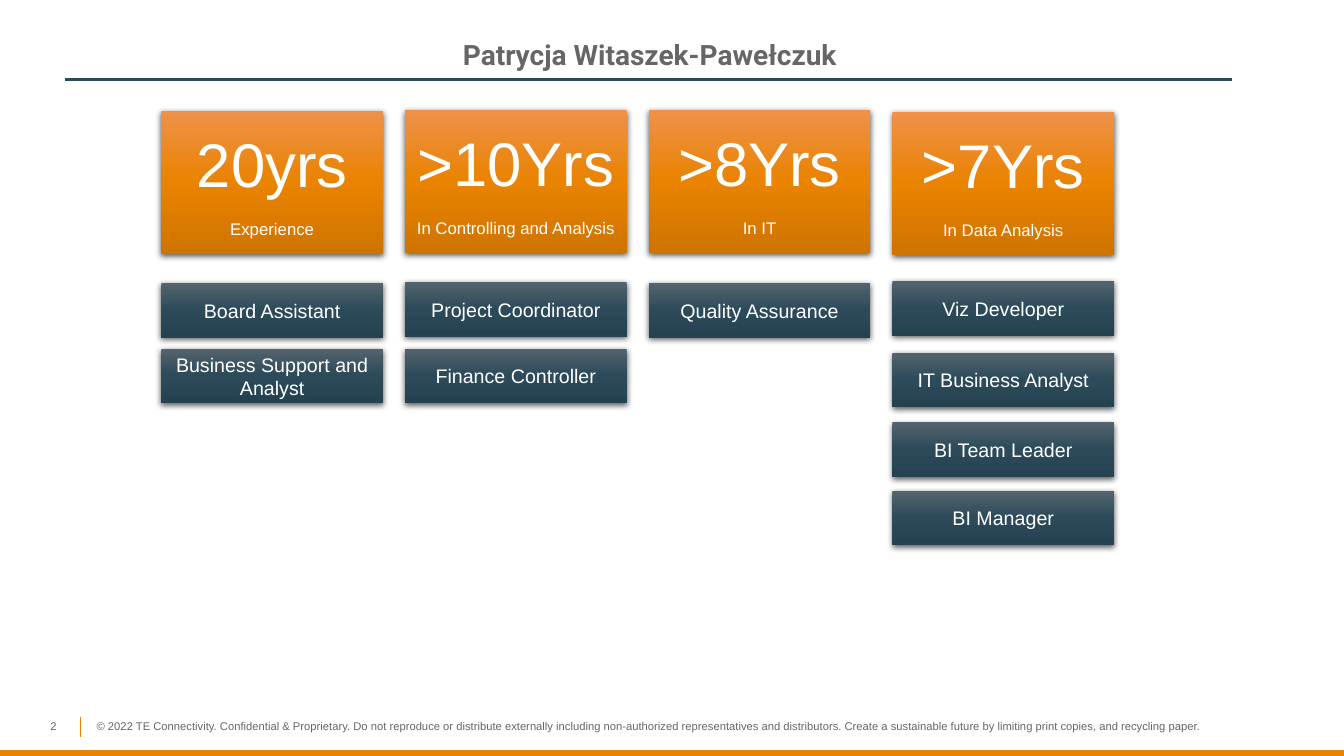
from pptx import Presentation
from pptx import util as u
from pptx.dml.color import RGBColor
from pptx.enum import shapes, text
from pptx.oxml import parse_xml
from pptx.oxml.ns import nsdecls

# Content: years, field, card top, then each role with its top
TITLE = "Patrycja Witaszek-Pawełczuk"
COLUMNS = [
    ("20yrs", "Experience", 1.1,
     [("Board Assistant", 2.81), ("Business Support and Analyst", 3.46)]),
    (">10Yrs", "In Controlling and Analysis", 1.09,
     [("Project Coordinator", 2.8), ("Finance Controller", 3.46)]),
    (">8Yrs", "In IT", 1.09, [("Quality Assurance", 2.81)]),
    (">7Yrs", "In Data Analysis", 1.11,
     [("Viz Developer", 2.79), ("IT Business Analyst", 3.5),
      ("BI Team Leader", 4.19), ("BI Manager", 4.87)]),
]
PAGE_NUMBER = "2"
COPYRIGHT = (
    "© 2022 TE Connectivity. Confidential & Proprietary. Do not reproduce or "
    "distribute externally including non-authorized representatives and "
    "distributors. Create a sustainable future by limiting print copies, and "
    "recycling paper."
)

# Style
ORANGE, NAVY, GREY, WHITE = "E98300", "2E4957", "666666", "FFFFFF"
ORANGE_FADE = ("EF914B", "E98300", "CF7400")
NAVY_FADE = ("54646E", "2C4A59", "254251")
LEFT, PITCH, WIDTH = 1.6, 2.417, 2.2
CARD_HEIGHT, ROLE_HEIGHT = 1.42, 0.54


def color(value):
    return RGBColor.from_string(value)


def write(para, words, size, ink, font="Arial", bold=False):
    span = para.add_run()
    span.text = words
    span.font.name, span.font.size, span.font.bold = font, u.Pt(size), bold
    span.font.color.rgb = color(ink)


def add_line(page, x1, y1, x2, y2, ink, weight):
    line = page.shapes.add_connector(
        shapes.MSO_CONNECTOR.STRAIGHT, *map(u.Inches, (x1, y1, x2, y2)))
    line.line.color.rgb = color(ink)
    line.line.width = u.Pt(weight)
    line._element.spPr.append(parse_xml(f"<a:effectLst {nsdecls('a')}/>"))


def add_tile(page, left, top, height, fade, lines):
    """Shaded box; lines holds (words, size, space before)."""
    box = page.shapes.add_shape(
        shapes.MSO_SHAPE.RECTANGLE, *map(u.Inches, (left, top, WIDTH, height)))
    box.line.fill.background()
    stops = "".join(f'<a:gs pos="{i * 50000}"><a:srgbClr val="{tone}"/></a:gs>'
                    for i, tone in enumerate(fade))
    properties = box._element.spPr
    properties.insert(2, parse_xml(
        f'<a:gradFill {nsdecls("a")} rotWithShape="1"><a:gsLst>{stops}</a:gsLst>'
        '<a:lin ang="5400000" scaled="0"/></a:gradFill>'))
    properties.append(parse_xml(
        f'<a:effectLst {nsdecls("a")}><a:outerShdw blurRad="{u.Pt(4.5)}" '
        f'dist="{u.Pt(1.5)}" dir="5400000" algn="ctr" rotWithShape="0">'
        '<a:srgbClr val="000000"><a:alpha val="63000"/></a:srgbClr>'
        '</a:outerShdw></a:effectLst>'))
    frame = box.text_frame
    frame.word_wrap = True
    frame.vertical_anchor = text.MSO_ANCHOR.MIDDLE
    for i, (words, size, gap) in enumerate(lines):
        para = frame.add_paragraph() if i else frame.paragraphs[0]
        para.alignment = text.PP_ALIGN.CENTER
        if gap:
            para.space_before = u.Pt(gap)
        write(para, words, size, WHITE)


def add_note(page, left, width, height, words, inset):
    box = page.shapes.add_textbox(*map(u.Inches, (left, 7.09, width, height)))
    frame = box.text_frame
    frame.word_wrap = True
    frame.margin_left = frame.margin_right = u.Inches(inset)
    write(frame.paragraphs[0], words, 8, GREY)


def main():
    deck = Presentation()
    deck.slide_width, deck.slide_height = u.Inches(13.33), u.Inches(7.5)
    page = deck.slides.add_slide(deck.slide_layouts[5])

    # Footer
    add_note(page, 0.86, 11.22, 0.21, COPYRIGHT, 0.1)
    add_line(page, 0, 7.47, 13.33, 7.47, ORANGE, 4.5)
    add_line(page, 0.8, 7.11, 0.8, 7.31, ORANGE, 1)
    add_note(page, 0.5, 0.28, 0.41, PAGE_NUMBER, 0)

    # Title and rule
    title = page.shapes.title
    title.left, title.top, title.width, title.height = map(
        u.Inches, (0.67, 0.37, 11.55, 0.67))
    frame = title.text_frame
    frame.margin_left = frame.margin_right = 0
    frame.margin_top = frame.margin_bottom = 0
    frame.vertical_anchor = text.MSO_ANCHOR.TOP
    frame.auto_size = text.MSO_AUTO_SIZE.NONE
    frame.paragraphs[0].alignment = text.PP_ALIGN.CENTER
    write(frame.paragraphs[0], TITLE, 20, GREY, "Roboto", True)
    add_line(page, 0.64, 0.79, 12.22, 0.79, NAVY, 2.25)

    # Experience cards with the roles below
    for i, (years, field, card_top, roles) in enumerate(COLUMNS):
        left = LEFT + i * PITCH
        add_tile(page, left, card_top, CARD_HEIGHT, ORANGE_FADE,
                 [(years, 44, 0), (field, 12, 14)])
        for role, top in roles:
            add_tile(page, left, top, ROLE_HEIGHT, NAVY_FADE, [(role, 14, 0)])

    deck.save("out.pptx")


if __name__ == "__main__":
    main()
